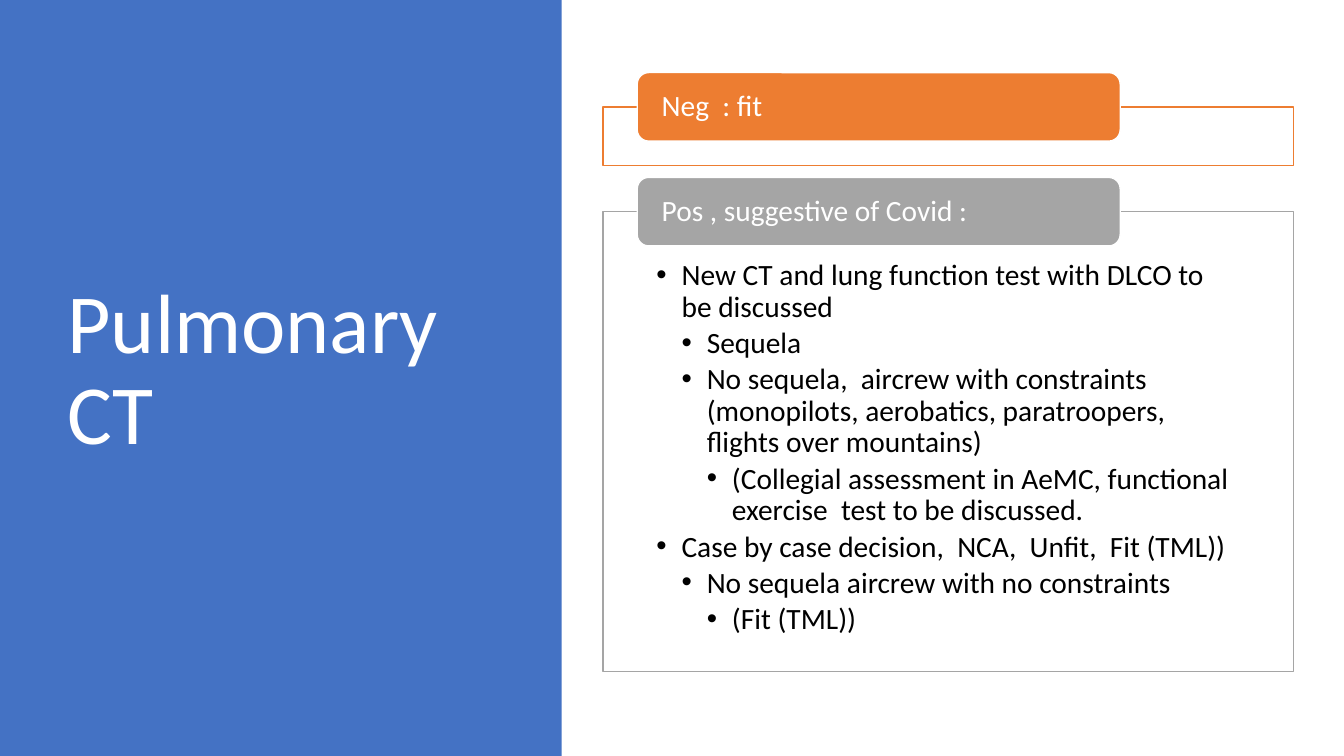
from dataclasses import dataclass

from lxml import etree
from pptx import Presentation
from pptx.dml.color import RGBColor
from pptx.enum.shapes import MSO_SHAPE
from pptx.enum.text import MSO_ANCHOR, MSO_AUTO_SIZE, PP_ALIGN
from pptx.oxml.ns import qn
from pptx.util import Inches, Pt

RECTANGLE, ROUNDED = MSO_SHAPE.RECTANGLE, MSO_SHAPE.ROUNDED_RECTANGLE
TOP, MIDDLE = MSO_ANCHOR.TOP, MSO_ANCHOR.MIDDLE
LEFT, NO_AUTOFIT = PP_ALIGN.LEFT, MSO_AUTO_SIZE.NONE


@dataclass(frozen=True)
class Theme:
    font: str = "Calibri"
    title_size: int = 60
    text_size: int = 21
    blue: str = "4472C4"
    orange: str = "ED7D31"
    gray: str = "A5A5A5"
    white: str = "FFFFFF"
    black: str = "000000"


theme = Theme()

# Lengths in inches
SLIDE_WIDTH, SLIDE_HEIGHT = 13.33, 7.5
PANEL_WIDTH = 5.57
BOX_LEFT, BOX_WIDTH = 5.98, 6.85
LABEL_LEFT, LABEL_WIDTH, LABEL_HEIGHT = 6.32, 4.79, 0.68
LABEL_RISE = LABEL_HEIGHT / 2
FIRST_BOX_TOP, BOX_PITCH = 1.06, 1.04
INDENT = 0.25

# Each section: label, colour, box height, bullets as (level, text)
SECTIONS = [
    ("Neg  : fit", theme.orange, 0.58, []),
    ("Pos , suggestive of Covid :", theme.gray, 4.56, [
        (0, "New CT and lung function test with DLCO to be discussed"),
        (1, "Sequela"),
        (1, "No sequela,  aircrew with constraints (monopilots, aerobatics, "
            "paratroopers, flights over mountains)"),
        (2, "(Collegial assessment in AeMC, functional exercise  test to be discussed."),
        (0, "Case by case decision,  NCA,  Unfit,  Fit (TML))"),
        (1, "No sequela aircrew with no constraints"),
        (2, "(Fit (TML))"),
    ]),
]


def add_block(kind, left, top, width, height, fill, line=None):
    shape = slide.shapes.add_shape(
        kind, Inches(left), Inches(top), Inches(width), Inches(height))
    shape.shadow.inherit = False
    shape.fill.solid()
    shape.fill.fore_color.rgb = RGBColor.from_string(fill)
    if line:
        shape.line.color.rgb = RGBColor.from_string(line)
        shape.line.width = Pt(1)
    else:
        shape.line.fill.background()
    return shape


def format_text(text_frame, size, color, anchor, margins):
    text_frame.word_wrap = True
    text_frame.auto_size = NO_AUTOFIT
    text_frame.vertical_anchor = anchor
    (text_frame.margin_left, text_frame.margin_top,
     text_frame.margin_right, text_frame.margin_bottom) = map(Inches, margins)
    for paragraph in text_frame.paragraphs:
        paragraph.alignment = LEFT
        paragraph.line_spacing = 0.9
        for run in paragraph.runs:
            run.font.name = theme.font
            run.font.size = Pt(size)
            run.font.color.rgb = RGBColor.from_string(color)


presentation = Presentation()
presentation.slide_width = Inches(SLIDE_WIDTH)
presentation.slide_height = Inches(SLIDE_HEIGHT)
slide = presentation.slides.add_slide(presentation.slide_layouts[5])

# Blue panel, placed behind the title
panel = add_block(RECTANGLE, 0, 0, PANEL_WIDTH, SLIDE_HEIGHT, theme.blue)
title = slide.shapes.title
title.element.addprevious(panel.element)

# Title
title.left, title.top = Inches(0.57), Inches(0.68)
title.width, title.height = Inches(4.16), Inches(6.02)
title.text_frame.text = "Pulmonary CT"
format_text(title.text_frame, theme.title_size, theme.white, MIDDLE,
            (0.1, 0.05, 0.1, 0.05))

# Outlined boxes with a label across the top edge
for index, (label_text, color, box_height, bullets) in enumerate(SECTIONS):
    box_top = FIRST_BOX_TOP + index * BOX_PITCH
    box = add_block(RECTANGLE, BOX_LEFT, box_top, BOX_WIDTH, box_height,
                    theme.white, color)
    if bullets:
        box.text_frame.text = "\n".join(text for level, text in bullets)
        format_text(box.text_frame, theme.text_size, theme.black, TOP,
                    (0.53, 0.48, 0.53, 0.16))
        for paragraph, (level, text) in zip(box.text_frame.paragraphs, bullets):
            paragraph.level = level
            paragraph.space_after = Pt(3.15)
            properties = paragraph._p.get_or_add_pPr()
            properties.set("marL", str(Inches(INDENT * (level + 1))))
            properties.set("indent", str(-Inches(INDENT)))
            etree.SubElement(properties, qn("a:buFont")).set("typeface", "Arial")
            etree.SubElement(properties, qn("a:buChar")).set("char", "•")

    label = add_block(ROUNDED, LABEL_LEFT, box_top - LABEL_RISE,
                      LABEL_WIDTH, LABEL_HEIGHT, color, theme.white)
    label.text_frame.text = label_text
    format_text(label.text_frame, theme.text_size, theme.white, MIDDLE,
                (0.21, 0, 0.21, 0))

presentation.save("out.pptx")
